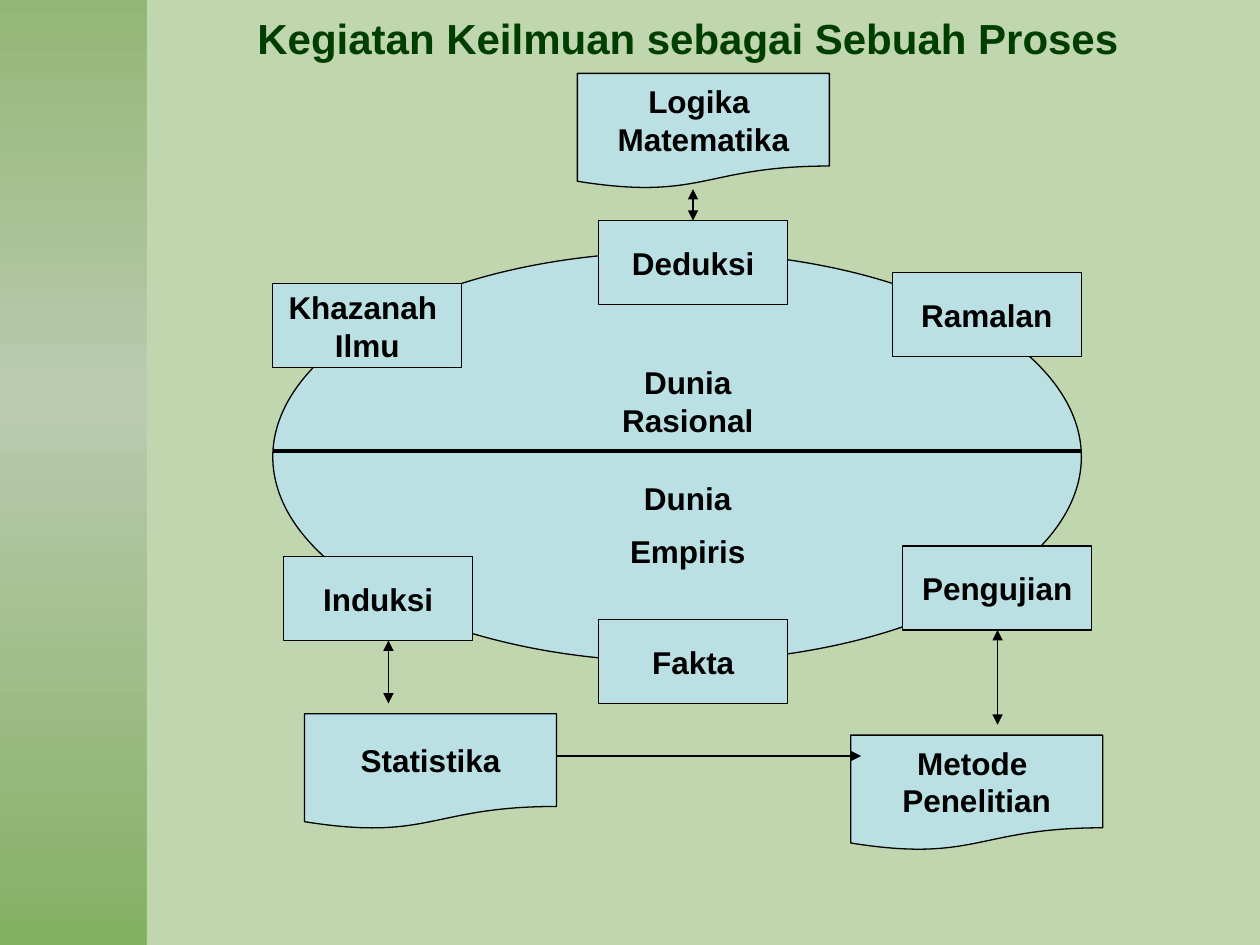
from copy import deepcopy

from lxml import etree
from pptx import Presentation
from pptx import util as u
from pptx.dml.color import RGBColor
from pptx.enum import shapes, text
from pptx.oxml.ns import qn

THEME = {
    "font": "Arial",
    "title_size": 24,
    "body_size": 18,
    "paragraph_gap": 9,
    "thin": 0.75,
    "thick": 2.25,
    "title": "003E00",
    "ink": "000000",
    "node": "BBE0E3",
    "panel": "BFD6AE",
    "band": [(0, "92B775"), (0.42, "BACBB0"), (1, "84B063")],
}

# Boxes are left, top, width, height in centimetres.
PAGE = (25.4, 19.05)
BAND = (0, 0, 3.18, 19.05)
PANEL = (2.96, 0, 22.44, 19.05)
WORLD = (5.5, 5.08, 16.3, 8.26)
TITLE = ("Kegiatan Keilmuan sebagai Sebuah Proses", (3.39, 0.21, 20.96, 1.19))

STEP_SIZE = (3.81, 1.69)
STEPS = [
    (["Induksi"], 5.72, 11.22),
    (["Pengujian"], 18.2, 11.01),
    (["Fakta"], 12.07, 12.49),
    (["Khazanah ", "Ilmu"], 5.5, 5.72),
    (["Deduksi"], 12.07, 4.45),
    (["Ramalan"], 17.99, 5.5),
]
TOOL_SIZE = (5.08, 2.33)
TOOLS = [
    (["Statistika"], 6.14, 14.39),
    (["Metode ", "Penelitian"], 17.15, 14.82),
    (["Logika ", "Matematika"], 11.64, 1.48),
]
WORLD_LABELS = [
    (["Dunia Rasional"], (11.64, 7.2, 4.45, 1.78)),
    (["Dunia", "Empiris"], (11.64, 9.53, 4.45, 2.16)),
]
# Start x, start y, end x, end y, line width, arrowheads.
LINES = [
    (11.22, 15.24, 17.36, 15.24, "thin", ["tailEnd"]),
    (7.83, 12.91, 7.83, 14.18, "thin", ["headEnd", "tailEnd"]),
    (20.11, 12.7, 20.11, 14.61, "thin", ["headEnd", "tailEnd"]),
    (5.5, 9.1, 21.8, 9.1, "thick", []),
    (13.97, 3.81, 13.97, 4.45, "thin", ["headEnd", "tailEnd"]),
]


def color(name):
    return RGBColor.from_string(THEME[name])


def set_values(target, values):
    for name, value in values.items():
        setattr(target, name, value)


def write(shape, lines, size="body_size", ink="ink", gap=0, **frame_values):
    frame = shape.text_frame
    set_values(frame, frame_values)
    for index, line in enumerate(lines):
        paragraph = frame.paragraphs[0] if index == 0 else frame.add_paragraph()
        paragraph.text = line
        paragraph.alignment = text.PP_ALIGN.CENTER
        if index:
            paragraph.space_before = u.Pt(gap)
        set_values(paragraph.font, {
            "name": THEME["font"], "size": u.Pt(THEME[size]), "bold": True})
        paragraph.font.color.rgb = color(ink)


def add_shape(slide, kind, box, fill, outlined=True):
    shape = slide.shapes.add_shape(kind, *map(u.Cm, box))
    shape.shadow.inherit = False
    shape.fill.solid()
    shape.fill.fore_color.rgb = color(fill)
    if outlined:
        shape.line.color.rgb = color("ink")
        shape.line.width = u.Pt(THEME["thin"])
    else:
        shape.line.fill.background()
    return shape


def add_text(slide, lines, box, **options):
    write(slide.shapes.add_textbox(*map(u.Cm, box)), lines, word_wrap=True, **options)


def add_nodes(slide, kind, nodes, size):
    for lines, left, top in nodes:
        shape = add_shape(slide, kind, (left, top, *size), "node")
        write(shape, lines, word_wrap=False, vertical_anchor=text.MSO_ANCHOR.MIDDLE)


def add_band(slide):
    """Side band whose gradient needs one stop more than the default two."""
    fill = add_shape(slide, shapes.MSO_SHAPE.RECTANGLE, BAND, "panel", False).fill
    fill.gradient()
    fill.gradient_angle = 270
    stop_list = slide.shapes[-1]._element.spPr.find(".//" + qn("a:gsLst"))
    stop_list.append(deepcopy(stop_list[0]))
    for stop, (position, value) in zip(fill.gradient_stops, THEME["band"]):
        stop.color.rgb = RGBColor.from_string(value)
        stop.position = position


def add_line(slide, points, width, heads):
    line = slide.shapes.add_connector(
        shapes.MSO_CONNECTOR.STRAIGHT, *map(u.Cm, points))
    line.line.color.rgb = color("ink")
    line.line.width = u.Pt(THEME[width])
    outline = line.line._get_or_add_ln()
    for head in heads:
        etree.SubElement(outline, qn("a:" + head), type="triangle")
    etree.SubElement(line._element.spPr, qn("a:effectLst"))


def main():
    presentation = Presentation()
    presentation.slide_width, presentation.slide_height = map(u.Cm, PAGE)
    slide = presentation.slides.add_slide(presentation.slide_layouts[6])

    add_band(slide)
    add_shape(slide, shapes.MSO_SHAPE.RECTANGLE, PANEL, "panel", False)
    title, title_box = TITLE
    add_text(slide, [title], title_box, size="title_size", ink="title",
             vertical_anchor=text.MSO_ANCHOR.BOTTOM)
    add_shape(slide, shapes.MSO_SHAPE.OVAL, WORLD, "node")
    add_nodes(slide, shapes.MSO_SHAPE.RECTANGLE, STEPS, STEP_SIZE)
    add_nodes(slide, shapes.MSO_SHAPE.FLOWCHART_DOCUMENT, TOOLS, TOOL_SIZE)
    for *points, width, heads in LINES:
        add_line(slide, points, width, heads)
    for lines, box in WORLD_LABELS:
        add_text(slide, lines, box, gap=THEME["paragraph_gap"])
    presentation.save("out.pptx")


if __name__ == "__main__":
    main()
